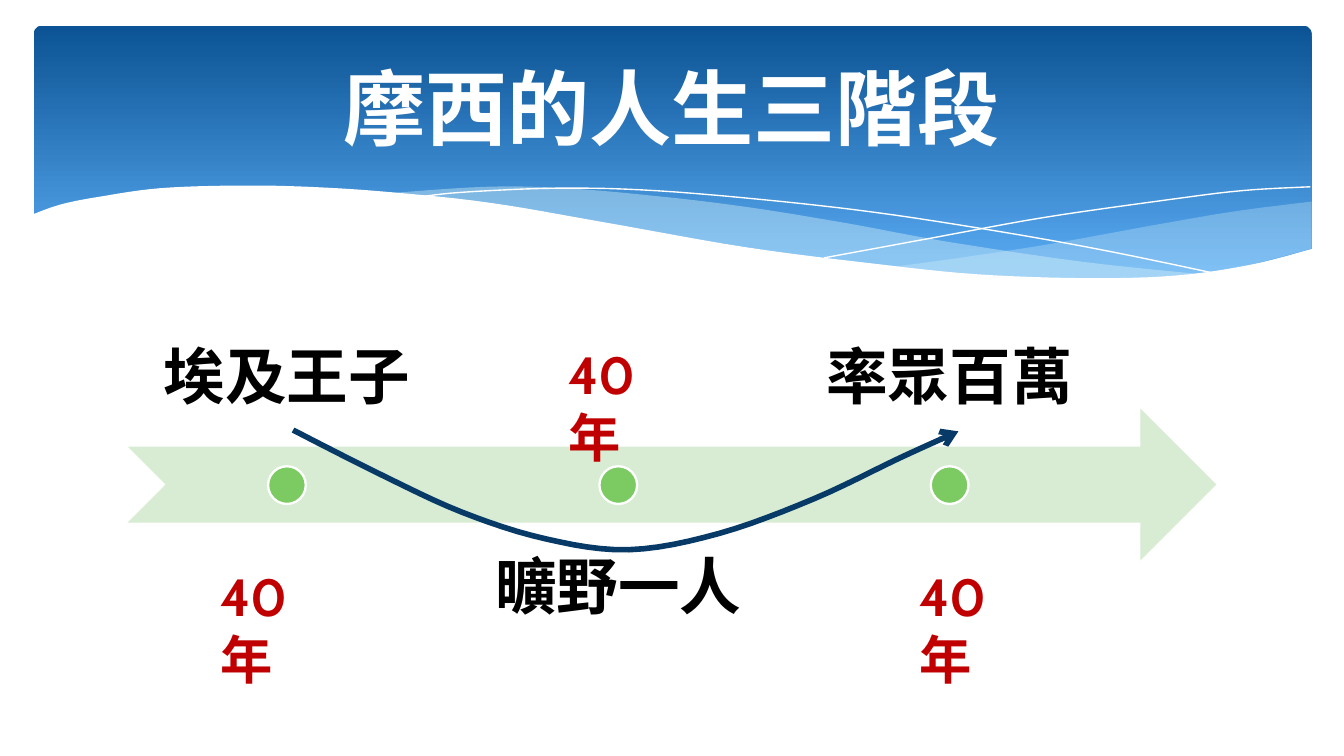
"""Build the slide on the three stages of the life of Moses."""
from lxml import etree
from pptx import Presentation
from pptx.dml.color import RGBColor
from pptx.enum.shapes import MSO_SHAPE
from pptx.enum.text import MSO_ANCHOR, PP_ALIGN
from pptx.oxml.ns import qn
from pptx.util import Pt

ROUND, ARROW, DOT = MSO_SHAPE.ROUNDED_RECTANGLE, MSO_SHAPE.NOTCHED_RIGHT_ARROW, MSO_SHAPE.OVAL
TOP, MIDDLE, BOTTOM = MSO_ANCHOR.TOP, MSO_ANCHOR.MIDDLE, MSO_ANCHOR.BOTTOM
LEFT, CENTER = PP_ALIGN.LEFT, PP_ALIGN.CENTER

WHITE = RGBColor(0xFF, 0xFF, 0xFF)
BLACK = RGBColor(0x00, 0x00, 0x00)
RED = RGBColor(0xC0, 0x00, 0x00)
NAVY = RGBColor(0x08, 0x3A, 0x67)
DEEP_BLUE = RGBColor(0x0B, 0x53, 0x94)
SKY_BLUE = RGBColor(0x59, 0xAA, 0xF2)
ICE = RGBColor(0xDB, 0xF5, 0xF9)
PALE_GREEN = RGBColor(0xD7, 0xEC, 0xD3)
GREEN = RGBColor(0x7C, 0xCA, 0x62)

RIGHT_WAVE_TOP = [(702.7, 108), (663, 113), (620, 120.3), (561, 131), (508, 139), (476, 143.3)]
RIGHT_WAVE_BASE = [(476, 143.3), (508, 146.2), (545, 149), (586, 149.8), (628, 148.3),
                   (663, 143.3), (702.7, 133.2)]
MID_WAVE_TOP = [(643, 146.9), (581, 140.4), (508, 129.6), (453, 119.5), (400, 110.9),
                (352, 105.1), (302, 100.8), (260, 100.1), (206, 103.7)]
MID_WAVE_BASE = [(206, 103.7), (261, 109.4), (323, 119.5), (382, 129.6), (433, 137.5),
                 (490, 144.7), (539, 149), (589, 150.5), (643, 146.9)]
FALLING_LINE = [(222.5, 105.8), (248, 103), (300, 100.8), (352, 102.2), (419, 108),
                (479, 115.2), (547, 126), (598, 135.4), (653, 146.9)]
RISING_LINE = [(441.4, 138.2), (500, 127.4), (559, 116.6), (624, 107.3), (665, 102.2), (702, 100.1)]
WHITE_WAVE = [(703.4, 133.2), (670, 141.8), (630, 147.6), (582, 149), (523, 146.9),
              (467, 141.1), (400, 132.5), (322, 118.8), (263, 108.7), (210, 103),
              (166, 100.1), (127, 99.4), (86, 100.8), (55, 105.1), (33, 109.4), (16.6, 115.2)]
WHITE_BASE = [(16.6, 177.8), (703.4, 177.8)]
LIFE_CURVE = [(157, 230.4), (202.3, 253.4), (247.2, 274.3), (292.3, 288.7), (337, 294.5),
              (385.2, 285.8), (436.3, 267.1), (481.7, 245.5), (513.4, 231.1)]

STAGES = [("埃及王子", 157.7, BOTTOM, (110.9, 298.8)),
          ("曠野一人", 280.1, TOP, (297.4, 180)),
          ("率眾百萬", 157.7, BOTTOM, (485.3, 298.8))]
STAGE_LEFT, STAGE_STEP, STAGE_W, STAGE_H = 69.1, 177.5, 169.2, 81.4
DOT_SIZE, DOT_TOP = 20.2, 249.8


def smooth(knots, steps=6):
    """Return points on a Catmull-Rom curve through the knots."""
    ext = [knots[0], *knots, knots[-1]]
    pts = [knots[0]]
    for a, b, c, d in zip(ext, ext[1:], ext[2:], ext[3:]):
        for i in range(1, steps + 1):
            t = i / steps
            pts.append(tuple(
                (2 * q + (r - p) * t + (2 * p - 5 * q + 4 * r - s) * t ** 2
                 + (3 * q - p - 3 * r + s) * t ** 3) / 2
                for p, q, r, s in zip(a, b, c, d)))
    return pts


def set_attrs(obj, values):
    """Set each named value on an object."""
    for name, value in values.items():
        setattr(obj, name, value)


def paint(sp, fill=None, line=None, width=0):
    """Give a shape its fill and line, without shadow."""
    sp.shadow.inherit = False
    if fill is None:
        sp.fill.background()
    else:
        sp.fill.solid()
        sp.fill.fore_color.rgb = fill
    if line is None:
        sp.line.fill.background()
    else:
        sp.line.color.rgb = line
        sp.line.width = Pt(width)


def add_preset(slide, kind, box, **style):
    """Add a painted preset shape."""
    sp = slide.shapes.add_shape(kind, *map(Pt, box))
    paint(sp, **style)
    return sp


def add_outline(slide, pts, close=True, alpha=None, **style):
    """Add a freeform, with its fill opacity in percent."""
    pts = [(Pt(x), Pt(y)) for x, y in pts]
    fb = slide.shapes.build_freeform(*pts[0], scale=1.0)
    fb.add_line_segments(pts[1:], close=close)
    sp = fb.convert_to_shape()
    paint(sp, **style)
    if alpha is not None:
        clr = sp.fill._xPr.find(".//" + qn("a:srgbClr"))
        etree.SubElement(clr, qn("a:alpha"), val=str(alpha * 1000))
    return sp


def write_text(sp, text, size, color, align=LEFT, anchor=TOP, spacing=1.0, margins=(7.2, 3.6)):
    """Write one bold paragraph into a shape."""
    side, edge = map(Pt, margins)
    tf = sp.text_frame
    set_attrs(tf, {"word_wrap": True, "vertical_anchor": anchor, "margin_left": side,
                   "margin_right": side, "margin_top": edge, "margin_bottom": edge})
    p = tf.paragraphs[0]
    set_attrs(p, {"alignment": align, "line_spacing": spacing})
    r = p.add_run()
    r.text = text
    set_attrs(r.font, {"name": "Cabin", "size": Pt(size), "bold": True})
    r.font.color.rgb = color


def add_header(slide):
    """Draw the blue header with its waves."""
    sp = add_preset(slide, ROUND, (18, 13.7, 684.7, 145.4), fill=DEEP_BLUE)
    sp.adjustments[0] = 0.03
    sp.fill.gradient()
    sp.fill.gradient_angle = 270
    for stop, color, pos in zip(sp.fill.gradient_stops, (DEEP_BLUE, SKY_BLUE), (0, 0.9)):
        stop.color.rgb = color
        stop.position = pos
    add_outline(slide, smooth(RIGHT_WAVE_TOP) + smooth(RIGHT_WAVE_BASE), fill=ICE, alpha=29)
    add_outline(slide, smooth(MID_WAVE_TOP) + smooth(MID_WAVE_BASE), fill=ICE, alpha=40)
    for knots in (FALLING_LINE, RISING_LINE):
        add_outline(slide, smooth(knots), close=False, line=WHITE)
    add_outline(slide, smooth(WHITE_WAVE) + WHITE_BASE, fill=WHITE)


def add_title(slide, text):
    """Place the title in front of the header."""
    sp = slide.shapes.title
    set_attrs(sp, {"left": Pt(36), "top": Pt(20.2), "width": Pt(648), "height": Pt(74.2)})
    write_text(sp, text, 44, WHITE, CENTER, MIDDLE)
    slide.shapes._spTree.append(sp._element)


def add_text(slide, box, *args, **style):
    """Add a text box with one paragraph."""
    write_text(slide.shapes.add_textbox(*map(Pt, box)), *args, **style)


def add_timeline(slide):
    """Draw the arrow with its stages, years and life curve."""
    add_preset(slide, ARROW, (68.4, 218.9, 583.2, 81.4), fill=PALE_GREEN)
    for i, (name, top, anchor, years_at) in enumerate(STAGES):
        left = STAGE_LEFT + i * STAGE_STEP
        add_text(slide, (left, top, STAGE_W, STAGE_H), name, 33, BLACK, align=CENTER,
                 anchor=anchor, spacing=0.9, margins=(18, 18.7))
        dot_left = left + (STAGE_W - DOT_SIZE) / 2
        add_preset(slide, DOT, (dot_left, DOT_TOP, DOT_SIZE, DOT_SIZE),
                   fill=GREEN, line=WHITE, width=1.25)
        add_text(slide, (*years_at, 73.4, 41), "40年", 28, RED)
    sp = add_outline(slide, smooth(LIFE_CURVE), close=False, line=NAVY, width=3)
    etree.SubElement(sp.line._get_or_add_ln(), qn("a:tailEnd"), type="arrow")


def main():
    """Build and save the slide."""
    prs = Presentation()
    set_attrs(prs, {"slide_width": Pt(720), "slide_height": Pt(405)})
    slide = prs.slides.add_slide(prs.slide_layouts[5])
    add_header(slide)
    add_title(slide, "摩西的人生三階段")
    add_timeline(slide)
    prs.save("out.pptx")


if __name__ == "__main__":
    main()
